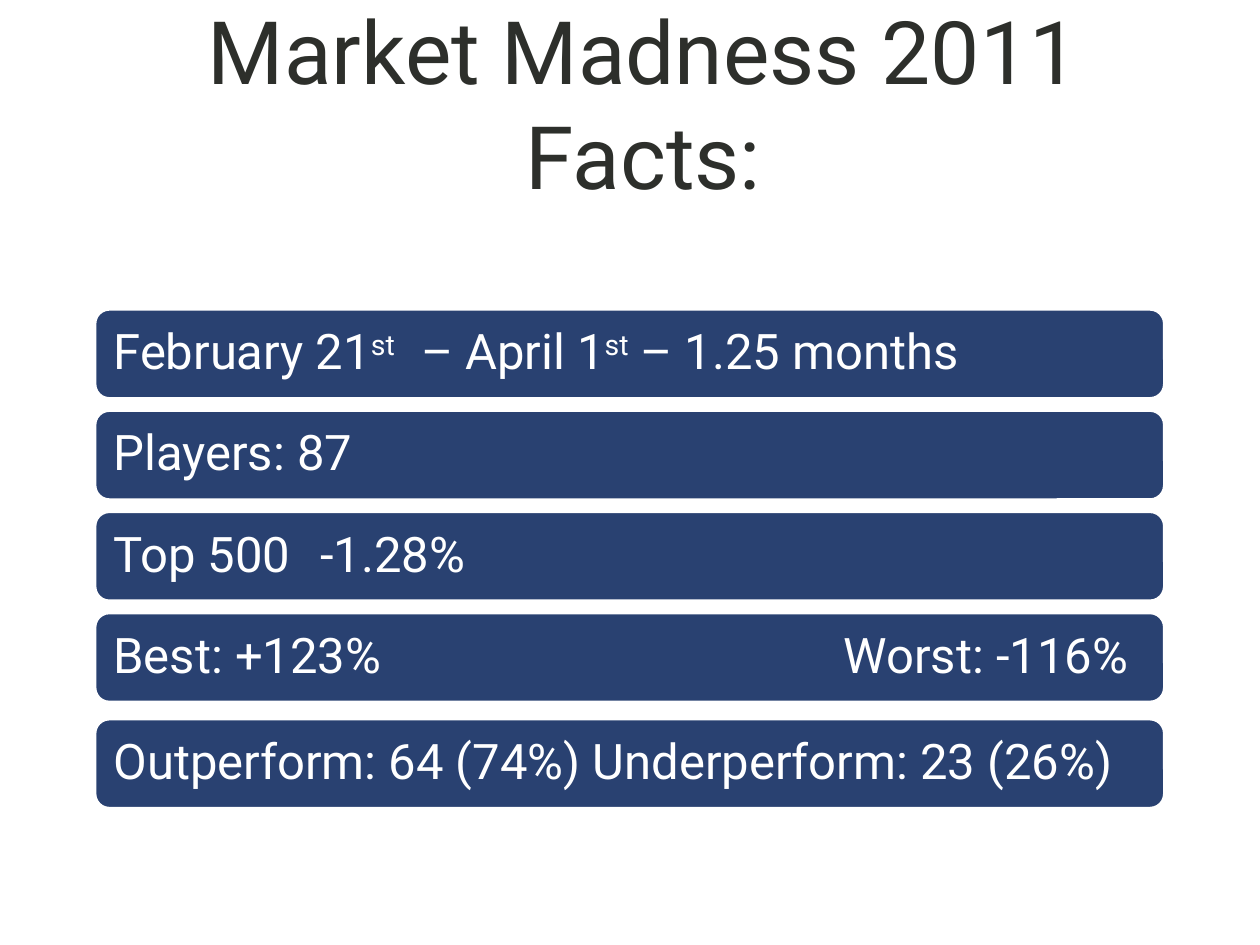
from lxml import etree
from pptx import Presentation
from pptx import util as u
from pptx.dml.color import RGBColor
from pptx.enum import shapes, text
from pptx.oxml import ns

NAVY = RGBColor(0x29, 0x41, 0x71)
WHITE = RGBColor(255, 255, 255)
INK = RGBColor(0x2D, 0x2F, 0x2B)
FACE = "Roboto"

# Content: text pieces ("st" is raised), then tab stop in cm and its alignment
TITLE = "Market Madness 2011 Facts:"
FACTS = [
    (["February 21", "st", "\t– April 1", "st", " – 1.25 months"], (6.2, "l")),
    (["Players: 87"], None),
    (["Top 500\t-1.28%"], (4.17, "l")),
    (["Best: +123%\tWorst: -116%"], (20.45, "r")),
    (["Outperform: 64 (74%) Underperform: 23 (26%)"], None),
]

# Bar grid in cm; the last bar sits a little lower
LEFT, TOP, WIDE, HIGH, STEP, DROP = 1.9, 6.22, 21.59, 1.83, 2.04, 0.1


def style(run, size, color):
    run.font.name = FACE
    run.font.size = u.Pt(size)
    run.font.color.rgb = color


def add_tab(para, stop):
    place, side = stop
    tabs = etree.SubElement(para._p.get_or_add_pPr(), ns.qn("a:tabLst"))
    etree.SubElement(tabs, ns.qn("a:tab"), pos=str(u.Cm(place)), algn=side)


def add_bar(slide, top, parts, stop):
    bar = slide.shapes.add_shape(
        shapes.MSO_SHAPE.ROUNDED_RECTANGLE,
        u.Cm(LEFT), u.Cm(top), u.Cm(WIDE), u.Cm(HIGH))
    bar.shadow.inherit = False
    bar.fill.solid()
    bar.fill.fore_color.rgb = NAVY
    bar.line.color.rgb = WHITE
    bar.line.width = u.Pt(2.5)

    frame = bar.text_frame
    frame.word_wrap = True
    frame.vertical_anchor = text.MSO_ANCHOR.MIDDLE
    frame.margin_left = frame.margin_right = u.Cm(0.3)
    frame.margin_top = frame.margin_bottom = u.Cm(0.3)
    para = frame.paragraphs[0]
    para.alignment = text.PP_ALIGN.LEFT
    para.line_spacing = 0.9
    if stop:
        add_tab(para, stop)
    for part in parts:
        run = para.add_run()
        run.text = part
        style(run, 28, WHITE)
        if part == "st":
            run._r.get_or_add_rPr().set("baseline", "30000")


def main():
    deck = Presentation()
    deck.slide_width, deck.slide_height = u.Cm(25.4), u.Cm(19.05)
    slide = deck.slides.add_slide(deck.slide_layouts[6])

    # Title
    box = slide.shapes.add_textbox(u.Cm(2.18), u.Cm(0.15), u.Cm(21.59), u.Cm(3.81))
    frame = box.text_frame
    frame.word_wrap = True
    frame.vertical_anchor = text.MSO_ANCHOR.MIDDLE
    frame.text = TITLE
    para = frame.paragraphs[0]
    para.alignment = text.PP_ALIGN.CENTER
    style(para.runs[0], 50, INK)

    # Fact bars
    for row, (parts, stop) in enumerate(FACTS):
        drop = DROP if row == len(FACTS) - 1 else 0
        add_bar(slide, TOP + row * STEP + drop, parts, stop)

    deck.save("out.pptx")


if __name__ == "__main__":
    main()
